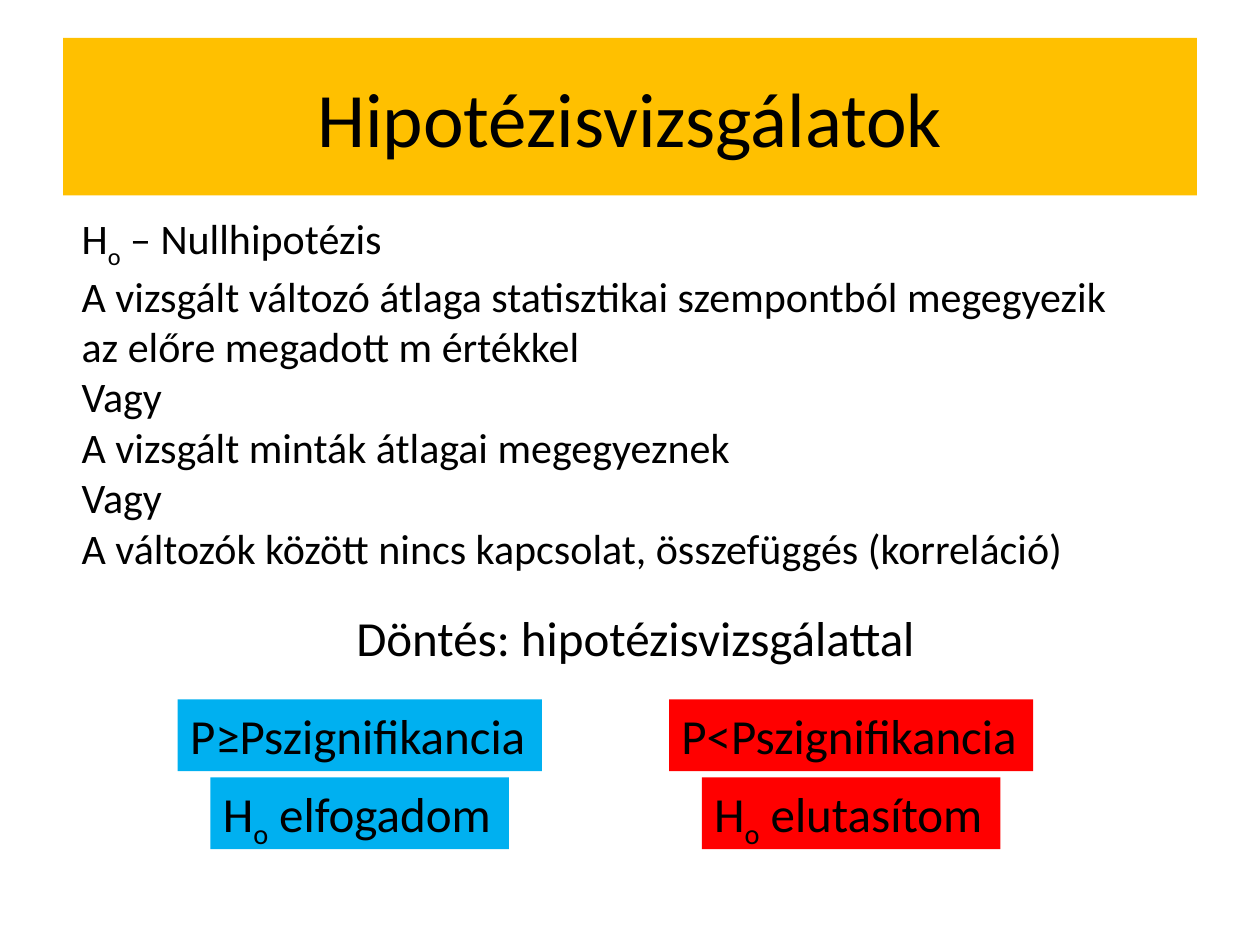
from pptx import Presentation
from pptx.dml.color import RGBColor
from pptx.enum.shapes import MSO_SHAPE as Shape
from pptx.enum.text import MSO_ANCHOR as Anchor, MSO_AUTO_SIZE as AutoSize, PP_ALIGN as Align
from pptx.util import Inches, Pt

COLORS = {"text": "000000", "title": "FFC000", "accept": "00B0F0", "reject": "FF0000"}
FONT = "Calibri"
SUBSCRIPT = "-25000"

# Text is a list of paragraphs; "_o" marks the subscript of H
NULL_HYPOTHESIS = [
    "H_o – Nullhipotézis",
    "A vizsgált változó átlaga statisztikai szempontból megegyezik az előre megadott m értékkel",
    "Vagy",
    "A vizsgált minták átlagai megegyeznek",
    "Vagy",
    "A változók között nincs kapcsolat, összefüggés (korreláció)",
]
# Decision columns: left edge, colour, condition, outcome
DECISIONS = [
    (1.41, "accept", "P≥Pszignifikancia", "H_o elfogadom"),
    (5.31, "reject", "P<Pszignifikancia", "H_o elutasítom"),
]
CONDITION_WIDTH, OUTCOME_WIDTH = 2.89, 2.37
DECISION_TOP, ROW_STEP, LINE_HEIGHT = 5.55, 0.62, 0.57


def set_values(target, values):
    for name, value in values.items():
        setattr(target, name, value)


def fill_shape(shape, color):
    shape.fill.solid()
    shape.fill.fore_color.rgb = RGBColor.from_string(COLORS[color])


def add_run(paragraph, text, size, subscript=False):
    run = paragraph.add_run()
    run.text = text
    set_values(run.font, {"name": FONT, "size": Pt(size)})
    run.font.color.rgb = RGBColor.from_string(COLORS["text"])
    if subscript:
        run.font._element.set("baseline", SUBSCRIPT)


def write_text(shape, lines, size, align=Align.LEFT, **frame_values):
    frame = shape.text_frame
    set_values(frame, frame_values)
    for index, line in enumerate(lines):
        paragraph = frame.add_paragraph() if index else frame.paragraphs[0]
        paragraph.alignment = align
        before, mark, after = line.partition("_o")
        add_run(paragraph, before, size)
        if mark:
            add_run(paragraph, "o", size, subscript=True)
            add_run(paragraph, after, size)


def add_title(slide, text):
    title = slide.shapes.title
    set_values(title, {"left": Inches(0.5), "top": Inches(0.3),
                       "width": Inches(9), "height": Inches(1.25)})
    fill_shape(title, "title")
    write_text(title, [text], 44, Align.CENTER, vertical_anchor=Anchor.MIDDLE)


def add_text(slide, box, lines, size, wrap):
    text_box = slide.shapes.add_textbox(*map(Inches, box))
    write_text(text_box, lines, size, word_wrap=wrap,
               auto_size=AutoSize.SHAPE_TO_FIT_TEXT)


def add_label(slide, box, text, color):
    label = slide.shapes.add_shape(Shape.RECTANGLE, *map(Inches, box))
    label.shadow.inherit = False
    label.line.fill.background()
    fill_shape(label, color)
    write_text(label, [text], 28, word_wrap=False, vertical_anchor=Anchor.TOP,
               auto_size=AutoSize.SHAPE_TO_FIT_TEXT)


def add_decision(slide, left, color, condition, outcome):
    # The outcome is centred below its condition
    indent = (CONDITION_WIDTH - OUTCOME_WIDTH) / 2
    add_label(slide, (left, DECISION_TOP, CONDITION_WIDTH, LINE_HEIGHT), condition, color)
    add_label(slide, (left + indent, DECISION_TOP + ROW_STEP, OUTCOME_WIDTH, LINE_HEIGHT),
              outcome, color)


def main():
    presentation = Presentation()
    set_values(presentation, {"slide_width": Inches(10), "slide_height": Inches(7.5)})
    slide = presentation.slides.add_slide(presentation.slide_layouts[5])

    # Title and hypothesis
    add_title(slide, "Hipotézisvizsgálatok")
    add_text(slide, (0.55, 1.64, 8.44, 2.93), NULL_HYPOTHESIS, 24, True)

    # Decision
    add_text(slide, (2.73, 4.77, 4.68, LINE_HEIGHT),
             ["Döntés: hipotézisvizsgálattal"], 28, False)
    for decision in DECISIONS:
        add_decision(slide, *decision)

    presentation.save("out.pptx")


if __name__ == "__main__":
    main()
